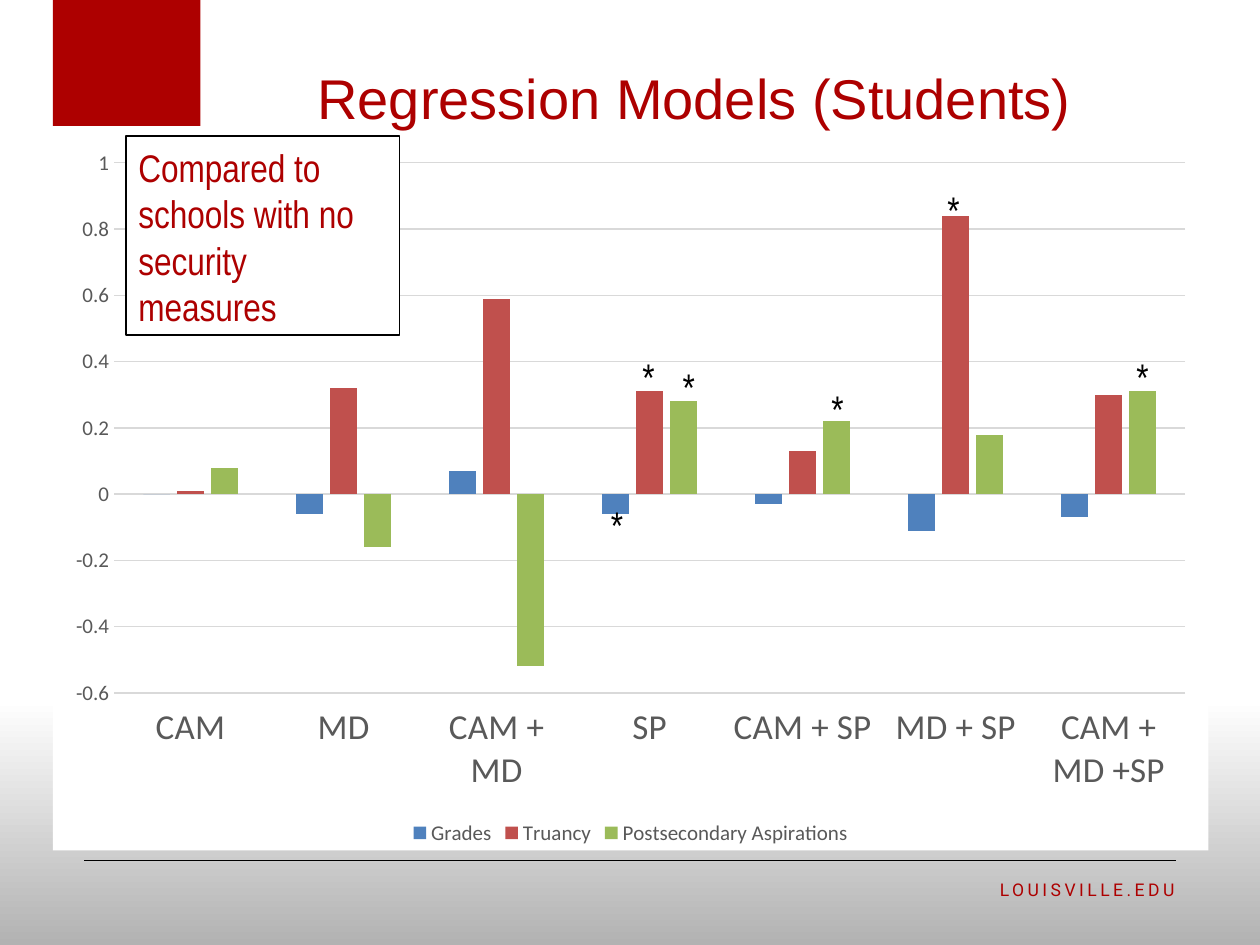
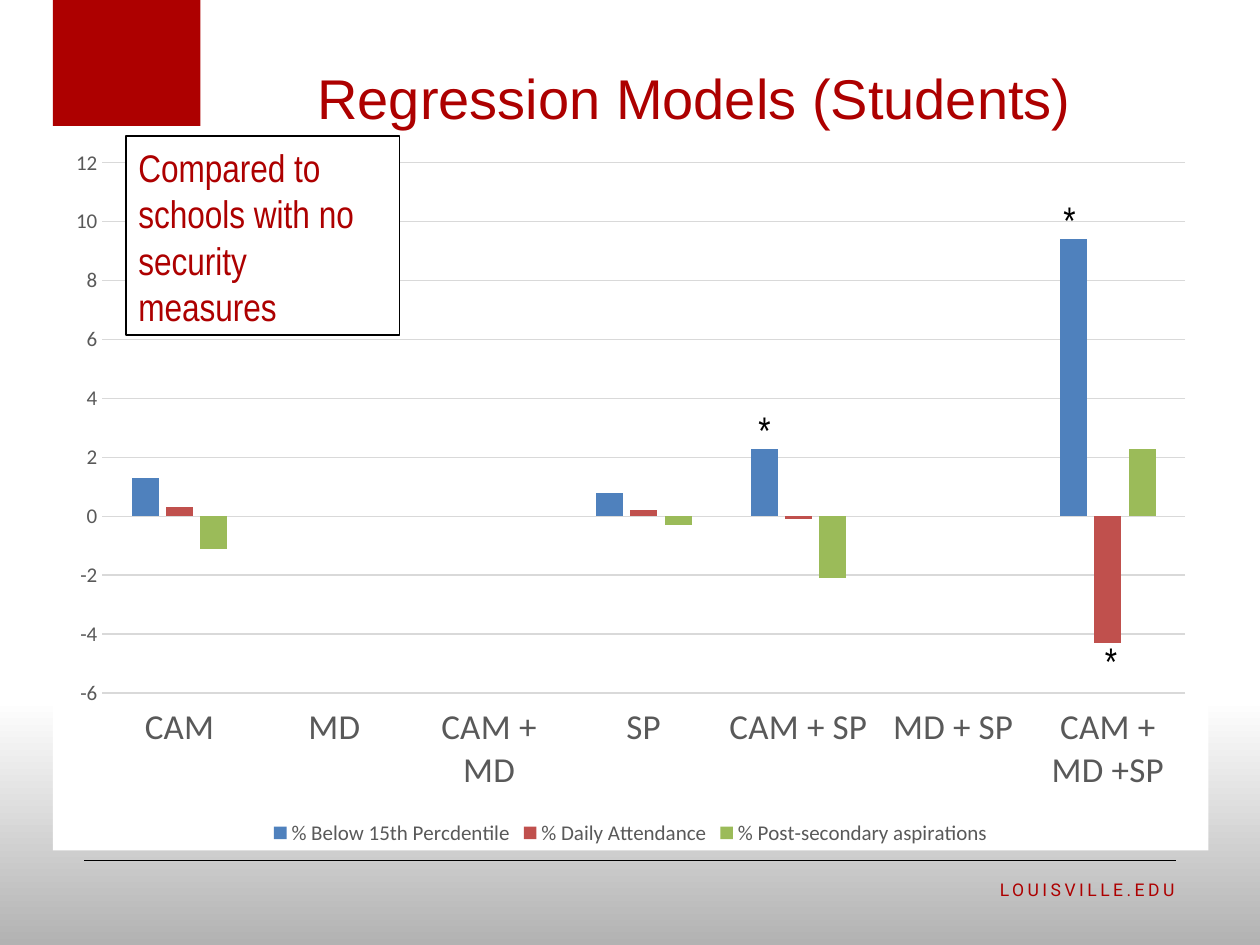
from dataclasses import dataclass

from lxml.etree import SubElement
from pptx import Presentation
from pptx.chart.data import CategoryChartData
from pptx.dml.color import RGBColor
from pptx.enum.chart import XL_CHART_TYPE, XL_LEGEND_POSITION, XL_TICK_LABEL_POSITION, XL_TICK_MARK
from pptx.enum.shapes import MSO_CONNECTOR, MSO_SHAPE
from pptx.enum.text import MSO_ANCHOR, MSO_AUTO_SIZE, PP_ALIGN
from pptx.oxml import parse_xml
from pptx.oxml.ns import nsdecls, qn
from pptx.util import Inches, Pt

RED, BLACK, WHITE = "AD0000", "000000", "FFFFFF"
GREY, GRID, BG_END = "595959", "D9D9D9", "B2B2B2"
SERIES_COLORS = ["4F81BD", "C0504D", "9BBB59"]
CATEGORIES = ["CAM", "MD", "CAM + MD", "SP", "CAM + SP", "MD + SP", "CAM + MD +SP"]
STAR_SIZE = (0.32, 0.47)


@dataclass
class Regression:
    series: dict[str, list[float | None]]
    stars: list[tuple[float, float]]


REGRESSIONS = [
    Regression(
        {
            "Grades": [0, -0.06, 0.07, -0.06, -0.03, -0.11, -0.07],
            "Truancy": [0.01, 0.32, 0.59, 0.31, 0.13, 0.84, 0.3],
            "Postsecondary Aspirations": [0.08, -0.16, -0.52, 0.28, 0.22, 0.18, 0.31],
        },
        [(4.75, 3.92), (8.92, 2.75), (6.5, 3), (5.32, 2.83), (7.42, 1.42), (5, 2.75)],
    ),
    Regression(
        {
            "% Below 15th Percdentile": [1.3, None, None, 0.8, 2.3, None, 9.4],
            "% Daily Attendance": [0.3, None, None, 0.2, -0.1, None, -4.3],
            "% Post-secondary aspirations": [-1.1, None, None, -0.3, -2.1, None, 2.3],
        },
        [(8.34, 1.5), (5.92, 3.17), (8.67, 5)],
    ),
]


def rgb(color: str) -> RGBColor:
    return RGBColor.from_string(color)


def set_font(font, name: str, size: float, color: str) -> None:
    font.name, font.size = name, Pt(size)
    font.color.rgb = rgb(color)


def write(sp, text: str, name: str, size: float, color: str,
          anchor=MSO_ANCHOR.BOTTOM, align=PP_ALIGN.LEFT, wrap: bool = True, grow: bool = False):
    tf = sp.text_frame
    tf.word_wrap = wrap
    tf.vertical_anchor = anchor
    tf.auto_size = MSO_AUTO_SIZE.SHAPE_TO_FIT_TEXT if grow else MSO_AUTO_SIZE.NONE
    p = tf.paragraphs[0]
    p.alignment = align
    r = p.add_run()
    r.text = text
    set_font(p.font, name, size, color)
    return r


def add_box(s, x: float, y: float, w: float, h: float):
    return s.shapes.add_textbox(Inches(x), Inches(y), Inches(w), Inches(h))


def add_rect(s, x: float, y: float, w: float, h: float, fill: str, line: str | None = None):
    sp = s.shapes.add_shape(MSO_SHAPE.RECTANGLE, Inches(x), Inches(y), Inches(w), Inches(h))
    sp.shadow.inherit = False
    sp.fill.solid()
    sp.fill.fore_color.rgb = rgb(fill)
    if line:
        sp.line.color.rgb = rgb(line)
        sp.line.width = 0
    else:
        sp.line.fill.background()
    return sp


def add_frame(s) -> None:
    fill = s.background.fill
    fill.gradient()
    fill.gradient_angle = 270
    for stop, position, color in zip(fill.gradient_stops, (0.74, 1), (WHITE, BG_END)):
        stop.position = position
        stop.color.rgb = rgb(color)
    rule = s.shapes.add_connector(MSO_CONNECTOR.STRAIGHT, Inches(9.33), Inches(6.83),
                                  Inches(0.67), Inches(6.83))
    rule.line.color.rgb = rgb(BLACK)
    rule.line.width = Pt(0.5)
    SubElement(rule.element.spPr, qn("a:effectLst"))
    add_rect(s, 0.42, 0, 1.17, 1, RED)
    r = write(add_box(s, 7.17, 6.93, 2.25, 0.4), "LOUISVILLE.EDU", "Roboto", 10, RED,
              MSO_ANCHOR.TOP, PP_ALIGN.RIGHT)
    r.font._element.set("spc", "200")
    write(add_box(s, 2.42, 0.17, 7.58, 0.92), "Regression Models (Students)", "Arial", 32, RED)


def add_regression_chart(s, reg: Regression) -> None:
    data = CategoryChartData()
    data.categories = CATEGORIES
    for name, values in reg.series.items():
        data.add_series(name, values)
    chart = s.shapes.add_chart(XL_CHART_TYPE.COLUMN_CLUSTERED, Inches(0.42), Inches(1.08),
                               Inches(9.17), Inches(5.67), data).chart
    chart.has_title = False
    set_font(chart.font, "Calibri", 10, BLACK)
    chart.element.find(qn("c:chart")).addnext(parse_xml(
        f'<c:spPr {nsdecls("c", "a")}><a:solidFill><a:srgbClr val="{WHITE}"/></a:solidFill>'
        "<a:ln><a:noFill/></a:ln></c:spPr>"))

    plot = chart.plots[0]
    plot.gap_width, plot.overlap, plot.vary_by_categories = 219, -27, False
    for series, color in zip(plot.series, SERIES_COLORS):
        series.invert_if_negative = False
        series.format.fill.solid()
        series.format.fill.fore_color.rgb = rgb(color)

    cat, val = chart.category_axis, chart.value_axis
    for axis, size in ((cat, 20), (val, 12)):
        axis.major_tick_mark = axis.minor_tick_mark = XL_TICK_MARK.NONE
        set_font(axis.tick_labels.font, "Calibri", size, GREY)
    cat.tick_label_position = XL_TICK_LABEL_POSITION.LOW
    val.has_major_gridlines = True
    val.format.line.fill.background()
    for line in (cat.format.line, val.major_gridlines.format.line):
        line.color.rgb = rgb(GRID)
        line.width = Pt(0.75)

    chart.has_legend = True
    chart.legend.position = XL_LEGEND_POSITION.BOTTOM
    chart.legend.include_in_layout = False
    set_font(chart.legend.font, "Calibri", 12, GREY)


def add_slide(prs, reg: Regression) -> None:
    s = prs.slides.add_slide(prs.slide_layouts[6])
    add_frame(s)
    add_regression_chart(s, reg)
    for x, y in reg.stars:
        write(add_box(s, x, y, *STAR_SIZE), "*", "Arial Narrow", 22, BLACK, wrap=False, grow=True)
    note = add_rect(s, 1, 1.08, 2.17, 1.58, WHITE, BLACK)
    write(note, "Compared to schools with no security measures", "Arial Narrow", 22, RED, grow=True)


def main() -> None:
    prs = Presentation()
    prs.slide_width, prs.slide_height = Inches(10), Inches(7.5)
    for reg in REGRESSIONS:
        add_slide(prs, reg)
    prs.save("out.pptx")


if __name__ == "__main__":
    main()
